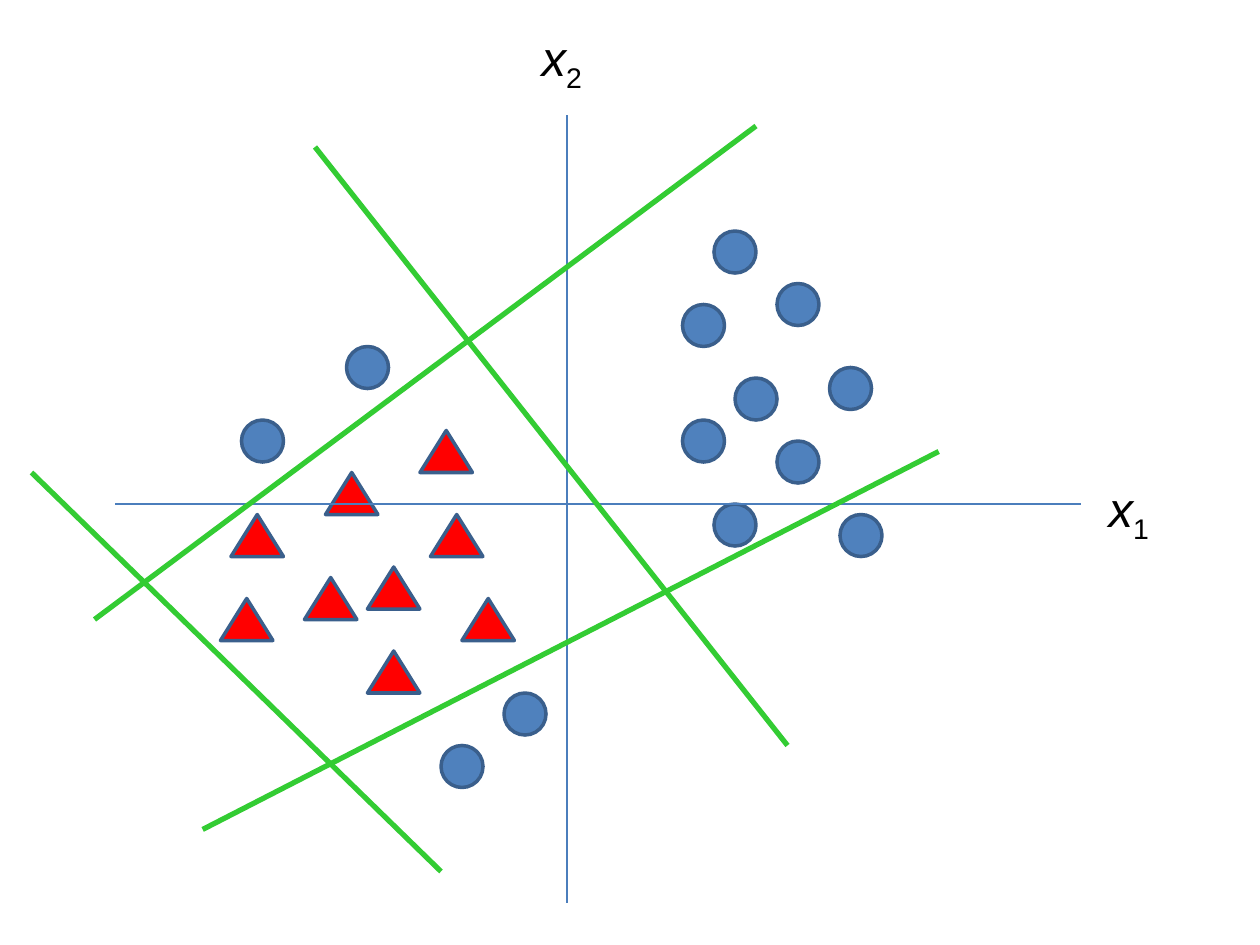
from collections import namedtuple

from lxml.etree import SubElement
from pptx import Presentation
from pptx.dml.color import RGBColor
from pptx.enum.shapes import MSO_CONNECTOR as Connector, MSO_SHAPE as Shape
from pptx.enum.text import MSO_AUTO_SIZE as AutoSize, PP_ALIGN as Align
from pptx.oxml.ns import qn
from pptx.util import Inches, Pt

COLORS = {
    "circle": "4F81BD",
    "triangle": "FF0000",
    "outline": "3A5F8C",
    "axis": "4B7EBC",
    "boundary": "33CC33",
    "text": "000000",
}
COLUMNS, ROWS = 120, 90
Box = namedtuple("Box", "left top width height")

# Top left corners of the points, in grid columns and rows
CIRCLES = [(65, 29), (74, 27), (80, 49), (79, 35), (68, 48), (23, 40),
           (68, 22), (74, 42), (65, 40), (70, 36), (42, 71), (48, 66), (33, 33)]
TRIANGLES = [(29, 55), (35, 54), (44, 57), (40, 41), (22, 49),
             (41, 49), (31, 45), (21, 57), (35, 62)]

# Ends of the lines, in grid columns and rows
AXES = [((11, 48), (103, 48)), ((54, 11), (54, 86))]
BOUNDARIES = [((30, 14), (75, 71)), ((72, 12), (9, 59)),
              ((89.4, 43), (19.3, 79)), ((3, 45), (42, 83))]
AXIS_LABELS = [("1", (104, 45)), ("2", (50, 2))]


def color(key):
    return RGBColor.from_string(COLORS[key])


def place(box, column, row):
    """Turn a grid position into a position on the slide."""
    return (round(box.left + box.width * column / COLUMNS),
            round(box.top + box.height * row / ROWS))


def size(box, columns, rows):
    return round(box.width * columns / COLUMNS), round(box.height * rows / ROWS)


def add_points(slide, box, kind, corners, extent, fill):
    for corner in corners:
        point = slide.shapes.add_shape(kind, *place(box, *corner), *size(box, *extent))
        point.shadow.inherit = False
        point.fill.solid()
        point.fill.fore_color.rgb = color(fill)
        point.line.color.rgb = color("outline")
        point.line.width = Pt(2)


def add_lines(slide, box, ends, stroke, width):
    for start, end in ends:
        line = slide.shapes.add_connector(
            Connector.STRAIGHT, *place(box, *start), *place(box, *end))
        line.line.color.rgb = color(stroke)
        line.line.width = Pt(width)
        SubElement(line._element.spPr, qn("a:effectLst"))


def add_axis_labels(slide, box):
    for index, corner in AXIS_LABELS:
        label = slide.shapes.add_textbox(*place(box, *corner), *size(box, 7, 6.9))
        frame = label.text_frame
        frame.word_wrap = True
        frame.auto_size = AutoSize.SHAPE_TO_FIT_TEXT
        paragraph = frame.paragraphs[0]
        paragraph.text = "x"
        paragraph.alignment = Align.CENTER
        subscript = paragraph.add_run()
        subscript.text = index
        for run in paragraph.runs:
            run.font.name = "Arial"
            run.font.size = Pt(28)
            run.font.color.rgb = color("text")
        paragraph.runs[0].font.italic = True
        subscript.font.italic = False
        subscript._r.get_or_add_rPr().set("baseline", "-25000")


def add_scatter(slide, box):
    # The two classes of points
    add_points(slide, box, Shape.OVAL, CIRCLES, (4, 4), "circle")
    add_points(slide, box, Shape.ISOSCELES_TRIANGLE, TRIANGLES, (5, 4), "triangle")
    # Axes with their names
    add_lines(slide, box, AXES, "axis", 0.75)
    add_axis_labels(slide, box)
    # Decision boundaries around the triangles
    add_lines(slide, box, BOUNDARIES, "boundary", 3)


def main():
    deck = Presentation()
    deck.slide_width, deck.slide_height = Inches(10), Inches(7.5)
    slide = deck.slides.add_slide(deck.slide_layouts[6])
    add_scatter(slide, Box(0, 0, deck.slide_width, deck.slide_height))
    deck.save("out.pptx")


if __name__ == "__main__":
    main()
